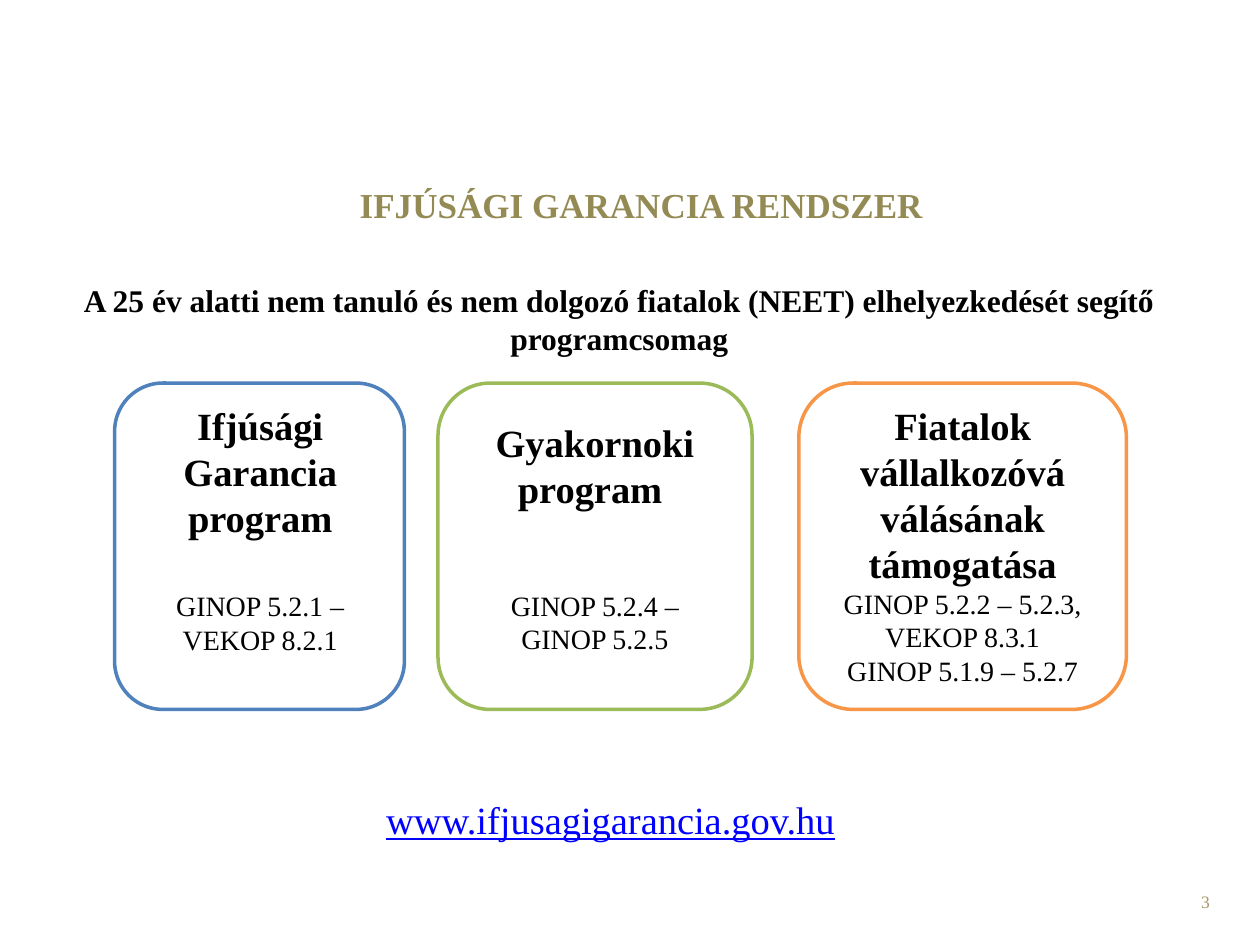
from pptx import Presentation
from pptx.dml.color import RGBColor
from pptx.enum.shapes import MSO_SHAPE
from pptx.enum.text import MSO_ANCHOR, PP_ALIGN
from pptx.util import Pt

COLORS = {
    "title": "948A54", "text": "000000", "link": "0000FF", "number": "A69765",
    "card": "FFFFFF", "youth": "4F81BD", "trainee": "9BBB59", "founder": "F79646",
}
HEADING = {"size": Pt(22), "bold": True}
CODES = {"size": Pt(16), "bold": False}


def write(frame, lines, color, align=PP_ALIGN.CENTER):
    """Fill a frame with (text, space before in points, font values) lines."""
    frame.word_wrap = True
    for index, (text, gap, values) in enumerate(lines):
        paragraph = frame.paragraphs[0] if index == 0 else frame.add_paragraph()
        paragraph.alignment = align
        if gap:
            paragraph.space_before = Pt(gap)
        run = paragraph.add_run()
        run.text = text
        run.font.name = "Times New Roman"
        run.font.color.rgb = RGBColor.from_string(COLORS[color])
        for name, value in values.items():
            setattr(run.font, name, value)


def add_text(box, lines, color="text", align=PP_ALIGN.CENTER):
    frame = slide.shapes.add_textbox(*map(Pt, box)).text_frame
    write(frame, lines, color, align)


presentation = Presentation()
presentation.slide_width, presentation.slide_height = Pt(720), Pt(540)
slide = presentation.slides.add_slide(presentation.slide_layouts[5])

# Title
title = slide.shapes.title
title.left, title.top, title.width, title.height = map(Pt, (42.5, 94.3, 648, 45.4))
title.text_frame.vertical_anchor = MSO_ANCHOR.MIDDLE
write(title.text_frame,
      [("IFJÚSÁGI GARANCIA RENDSZER", 0, {"size": Pt(20), "bold": True})], "title")

# Introduction
add_text((19.4, 157, 669, 50), [(
    "A 25 év alatti nem tanuló és nem dolgozó fiatalok (NEET) elhelyezkedését segítő programcsomag",
    0, {"size": Pt(18), "bold": True})])

# Programme cards: outline colour, left, width, text box, lines
programmes = [
    ("youth", 65.5, 165.6, (89.3, 226, 118.8, 155), [
        ("Ifjúsági Garancia program", 0, HEADING),
        ("GINOP 5.2.1 – VEKOP 8.2.1", 27.6, CODES)]),
    ("trainee", 250.3, 179.5, (261.4, 236, 157, 145), [
        ("Gyakornoki program ", 0, HEADING),
        ("GINOP 5.2.4 – GINOP 5.2.5", 43.7, CODES)]),
    ("founder", 456.5, 187.2, (456.5, 226, 187.2, 172), [
        ("Fiatalok vállalkozóvá válásának támogatása", 0, HEADING),
        ("GINOP 5.2.2 – 5.2.3,", 0, CODES),
        ("VEKOP 8.3.1", 0, CODES),
        ("GINOP 5.1.9 – 5.2.7", 0, CODES)]),
]
for outline, left, width, text_box, lines in programmes:
    card = slide.shapes.add_shape(
        MSO_SHAPE.ROUNDED_RECTANGLE, Pt(left), Pt(218.9), Pt(width), Pt(186.5))
    card.shadow.inherit = False
    card.fill.solid()
    card.fill.fore_color.rgb = RGBColor.from_string(COLORS["card"])
    card.line.color.rgb = RGBColor.from_string(COLORS[outline])
    card.line.width = Pt(2)
    add_text(text_box, lines)

# Web address and page number
add_text((54, 451.4, 589.7, 33.8),
         [("www.ifjusagigarancia.gov.hu", 0, {"size": Pt(22), "underline": True})], "link")
add_text((530.6, 505.8, 167.8, 28.8), [("3", 0, {"size": Pt(10)})], "number", PP_ALIGN.RIGHT)

presentation.save("out.pptx")
